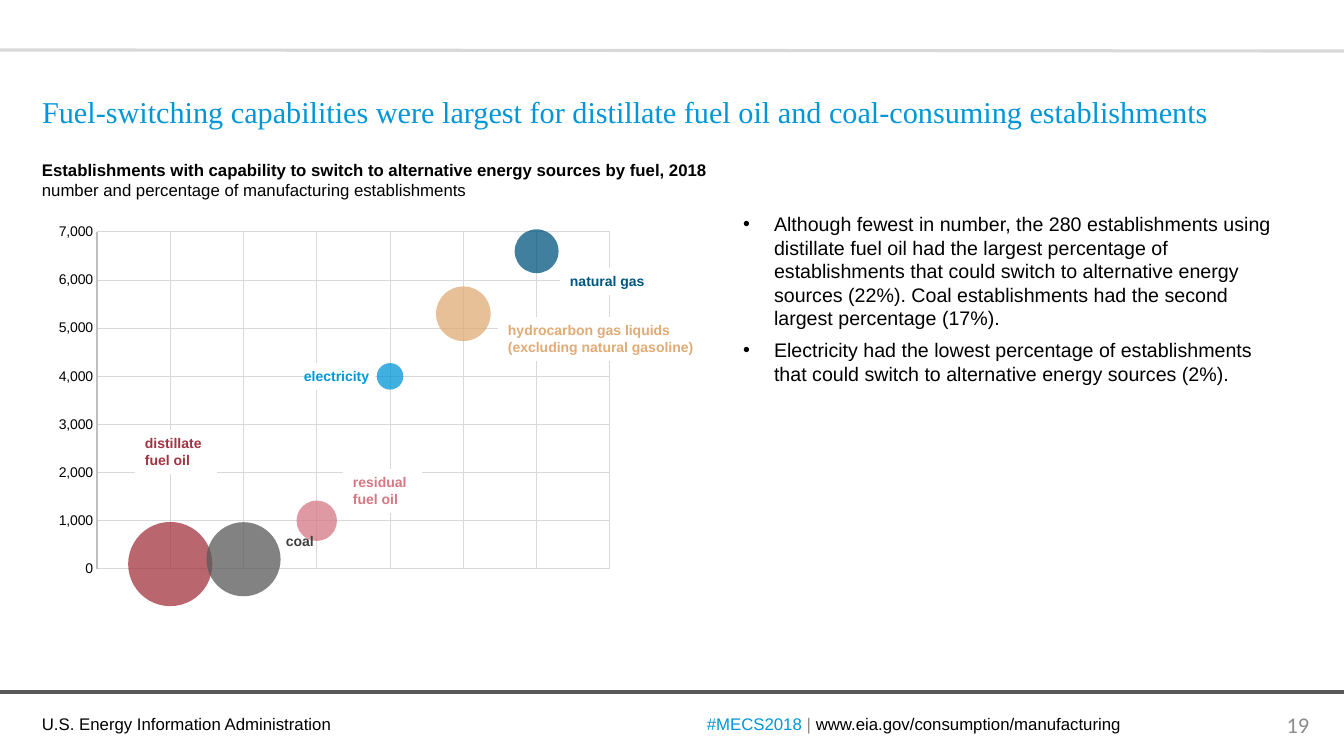
"""Build the slide on fuel-switching capabilities of manufacturing establishments."""
import pptx
import pptx.chart.data
import pptx.dml.color
import pptx.enum.chart
import pptx.enum.shapes
import pptx.enum.text
import pptx.oxml.ns
import pptx.util
from lxml import etree

RGB = pptx.dml.color.RGBColor
Pt = pptx.util.Pt
qn = pptx.oxml.ns.qn
ALIGN = pptx.enum.text.PP_ALIGN
ANCHOR = pptx.enum.text.MSO_ANCHOR

BLACK = RGB(0x00, 0x00, 0x00)
WHITE = RGB(0xFF, 0xFF, 0xFF)
BLUE = RGB(0x00, 0x96, 0xD7)
NAVY = RGB(0x00, 0x56, 0x7E)
TAN = RGB(0xE1, 0xAB, 0x76)
RED = RGB(0xA3, 0x33, 0x40)
PINK = RGB(0xD5, 0x78, 0x83)
DARK = RGB(0x59, 0x59, 0x59)
COAL = RGB(0x40, 0x40, 0x40)
GRAY = RGB(0x8C, 0x8C, 0x8C)
RULE = RGB(0xBF, 0xBF, 0xBF)
PALE = RGB(0xD9, 0xD9, 0xD9)

TITLE = ("Fuel-switching capabilities were largest for distillate fuel oil "
         "and coal-consuming establishments")
HEAD = ("Establishments with capability to switch to alternative energy sources by fuel, 2018",
        "number and percentage of manufacturing establishments")
BULLETS = (
    "Although fewest in number, the 280 establishments using distillate fuel oil had the "
    "largest percentage of establishments that could switch to alternative energy sources "
    "(22%). Coal establishments had the second largest percentage (17%).",
    "Electricity had the lowest percentage of establishments that could switch to "
    "alternative energy sources (2%).",
)
SOURCE = "U.S. Energy Information Administration"
LINKS = (("#MECS2018 ", BLUE), ("| ", GRAY), ("www.eia.gov/consumption/manufacturing", BLACK))
NUMBER = "19"

FUELS = (
    (100, 0.221, RED),
    (200, 0.171, DARK),
    (1000, 0.051, PINK),
    (4000, 0.022, BLUE),
    (5300, 0.093, TAN),
    (6600, 0.06, NAVY),
)
LABELS = (
    ("electricity", (304, 363, 71, 27), BLUE, WHITE, False, 0),
    ("coal", (276, 528, 48, 27), COAL, None, False, 10),
    ("hydrocarbon gas liquids (excluding natural gasoline)", (498, 317, 235, 44),
     TAN, WHITE, True, 10),
    ("natural gas", (560, 268, 96, 27), NAVY, WHITE, False, 10),
    ("distillate\nfuel oil", (135, 430, 82, 44), RED, WHITE, False, 10),
    ("residual\nfuel oil", (343, 469, 79, 44), PINK, WHITE, False, 10),
)
RULES = ((0, 692, 1344, 692, DARK), (0, 50, 1344, 51, PALE))
CHART = (47, 217, 574, 391)
PLOT = (97, 232, 513, 337)


def px(size):
    return round(size * 914400 / 100.8)


def place(shape, box):
    shape.left, shape.top, shape.width, shape.height = map(px, box)


def style(font, size, color, name="Arial", bold=False):
    font.size, font.name, font.bold = Pt(size), name, bold
    font.color.rgb = color


def write(frame, text, size, color, name="Arial", bold=False):
    frame.text = text
    for para in frame.paragraphs:
        for run in para.runs:
            style(run.font, size, color, name, bold)


def add_text(slide, box, anchor=ANCHOR.TOP):
    shape = slide.shapes.add_textbox(*map(px, box))
    frame = shape.text_frame
    frame.word_wrap = True
    frame.vertical_anchor = anchor
    return frame


def add_rule(slide, left, top, right, low, color):
    line = slide.shapes.add_connector(
        pptx.enum.shapes.MSO_CONNECTOR.STRAIGHT, px(left), px(top), px(right), px(low))
    line.line.color.rgb, line.line.width = color, Pt(2.25)
    etree.SubElement(line.element.spPr, qn("a:effectLst"))


def add_label(slide, text, box, color, fill, wrap, inset):
    if fill is None:
        frame = add_text(slide, box)
    else:
        shape = slide.shapes.add_shape(
            pptx.enum.shapes.MSO_SHAPE.RECTANGLE, *map(px, box))
        shape.shadow.inherit = False
        shape.fill.solid()
        shape.fill.fore_color.rgb = fill
        shape.line.fill.background()
        frame = shape.text_frame
        frame.vertical_anchor = ANCHOR.TOP
    frame.word_wrap = wrap
    frame.margin_left = frame.margin_right = px(inset)
    write(frame, text, 10, color, bold=True)
    for para in frame.paragraphs:
        para.alignment = ALIGN.LEFT


def set_plot(chart):
    area = chart.element.xpath(".//c:plotArea")[0]
    for old in area.findall(qn("c:layout")):
        area.remove(old)
    layout = etree.Element(qn("c:layout"))
    area.insert(0, layout)
    manual = etree.SubElement(layout, qn("c:manualLayout"))
    left, top, wide, high = CHART
    parts = (("layoutTarget", "inner"), ("xMode", "edge"), ("yMode", "edge"),
             ("x", (PLOT[0] - left) / wide), ("y", (PLOT[1] - top) / high),
             ("w", PLOT[2] / wide), ("h", PLOT[3] / high))
    for tag, value in parts:
        text = value if isinstance(value, str) else f"{value:.4f}"
        etree.SubElement(manual, qn("c:" + tag)).set("val", text)


def add_bubbles(slide):
    data = pptx.chart.data.BubbleChartData()
    series = data.add_series("Series 1")
    for rank, (count, share, color) in enumerate(FUELS, 1):
        series.add_data_point(rank, count, share)
    chart = slide.shapes.add_chart(
        pptx.enum.chart.XL_CHART_TYPE.BUBBLE, *map(px, CHART), data).chart
    chart.has_legend = chart.has_title = False
    style(chart.font, 10, BLACK, "Calibri")
    dots = chart.plots[0].series[0]
    dots.format.fill.solid()
    dots.format.fill.fore_color.rgb = BLUE
    dots.format.line.fill.background()
    for rank, (count, share, color) in enumerate(FUELS):
        form = dots.points[rank].format
        form.fill.solid()
        form.fill.fore_color.rgb = color
        form.line.fill.background()
    for color in chart.element.xpath(".//c:ser//a:solidFill/a:srgbClr"):
        etree.SubElement(color, qn("a:alpha")).set("val", "75000")
    for axis, top, unit in ((chart.category_axis, 7, 1), (chart.value_axis, 7000, 1000)):
        axis.minimum_scale, axis.maximum_scale, axis.major_unit = 0, top, unit
        axis.major_tick_mark = axis.minor_tick_mark = pptx.enum.chart.XL_TICK_MARK.NONE
        axis.has_major_gridlines = True
        grid = axis.major_gridlines.format.line
        grid.color.rgb, grid.width = PALE, Pt(0.75)
        axis.format.line.color.rgb, axis.format.line.width = RULE, Pt(0.75)
    chart.category_axis.visible = False
    ticks = chart.value_axis.tick_labels
    ticks.number_format, ticks.number_format_is_linked = "#,##0", False
    style(ticks.font, 10, BLACK)
    set_plot(chart)


def fill_holders(slide):
    title, body = slide.placeholders
    place(title, (32, 51, 1279, 84))
    place(body, (733, 207, 555, 217))
    write(title.text_frame, TITLE, 21.6, BLUE, "Times New Roman")
    title.text_frame.vertical_anchor = ANCHOR.BOTTOM
    title.text_frame.paragraphs[0].alignment = ALIGN.LEFT
    write(body.text_frame, "\n".join(BULLETS), 14, BLACK)
    for holder in (title, body):
        holder.text_frame.auto_size = pptx.enum.text.MSO_AUTO_SIZE.NONE
    for para in body.text_frame.paragraphs:
        para.space_before, para.space_after = Pt(0), Pt(6)
        props = para._p.get_or_add_pPr()
        props.set("marL", str(px(31)))
        props.set("indent", str(-px(31)))
        etree.SubElement(props, qn("a:buFont")).set("typeface", "Arial")
        etree.SubElement(props, qn("a:buChar")).set("char", "•")


def main():
    deck = pptx.Presentation()
    deck.slide_width, deck.slide_height = px(1344), px(756)
    slide = deck.slides.add_slide(deck.slide_layouts[1])
    fill_holders(slide)
    for rule in RULES:
        add_rule(slide, *rule)
    write(add_text(slide, (32, 709, 373, 30)), SOURCE, 12, BLACK)
    links = add_text(slide, (687, 704, 454, 40), ANCHOR.MIDDLE).paragraphs[0]
    links.alignment = ALIGN.CENTER
    for text, color in LINKS:
        run = links.add_run()
        run.text = text
        style(run.font, 12, color)
    page = add_text(slide, (1268, 705, 60, 40), ANCHOR.MIDDLE)
    write(page, NUMBER, 16, GRAY, "Calibri")
    page.paragraphs[0].alignment = ALIGN.CENTER
    add_bubbles(slide)
    head = add_text(slide, (32, 155, 701, 50))
    write(head, "\n".join(HEAD), 12, BLACK)
    head.paragraphs[0].runs[0].font.bold = True
    for label in LABELS:
        add_label(slide, *label)
    deck.save("out.pptx")


if __name__ == "__main__":
    main()
